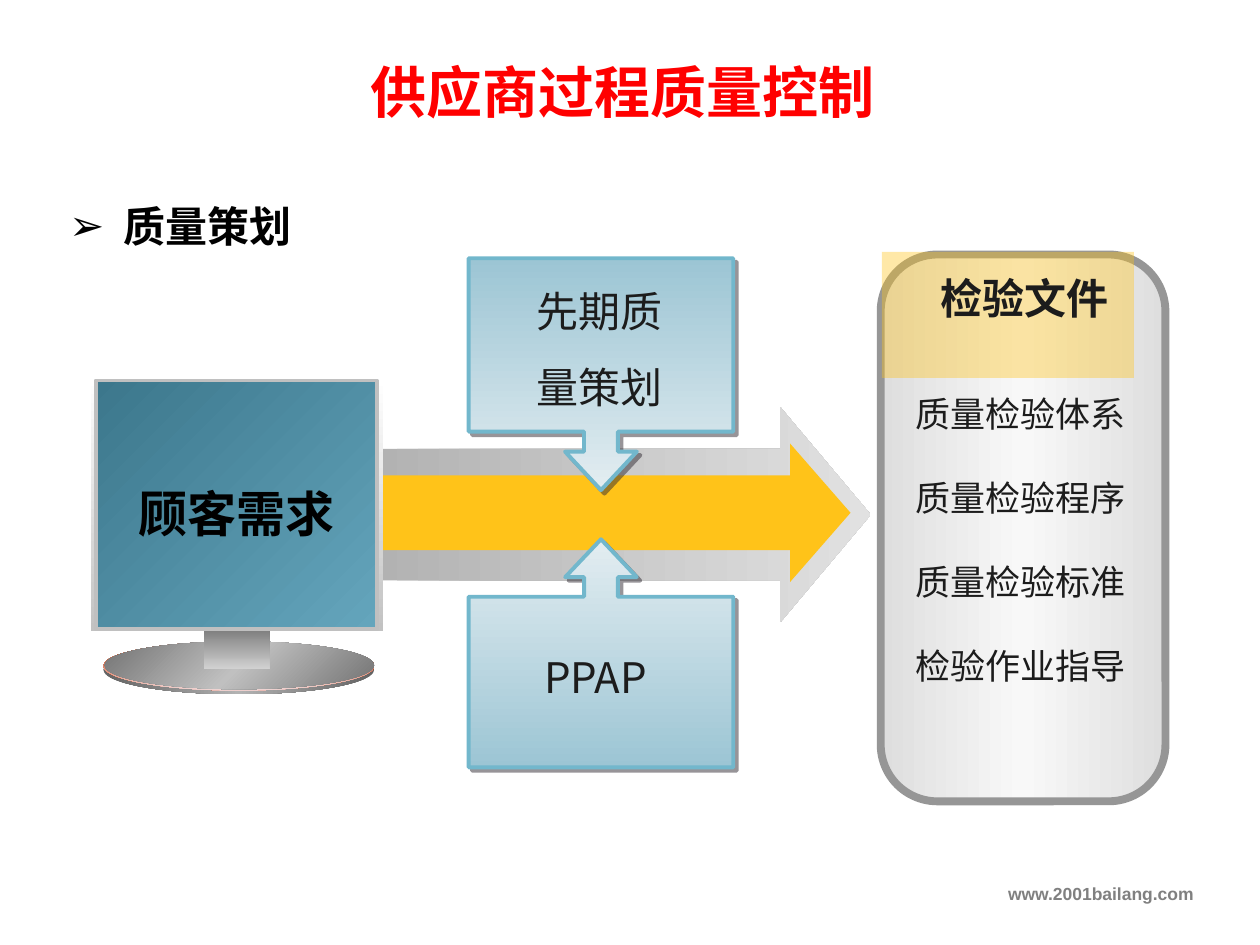
from dataclasses import dataclass

from lxml.etree import SubElement
from pptx import Presentation
from pptx.dml.color import RGBColor
from pptx.enum.shapes import MSO_SHAPE as Shape
from pptx.enum.text import MSO_ANCHOR as Anchor, PP_ALIGN as Align
from pptx.oxml.ns import qn
from pptx.util import Inches, Pt

CJK, LATIN = "Noto Sans CJK SC", "Arial"
BLACK, INK = RGBColor(0, 0, 0), RGBColor(0x1C, 0x1C, 0x1C)
RED, GRAY = RGBColor(0xFF, 0, 0), RGBColor(0x80, 0x80, 0x80)
AMBER = RGBColor(0xFF, 0xC3, 0x19)
SILVER, STEEL = RGBColor(0xC0, 0xC0, 0xC0), RGBColor(0x96, 0x96, 0x96)
SKY, SHADOW = RGBColor(0x72, 0xB7, 0xCC), RGBColor(0x30, 0x2A, 0x32)
CALLOUT_DARK, CALLOUT_LIGHT = RGBColor(0x9C, 0xC5, 0xD4), RGBColor(0xE3, 0xED, 0xF1)


@dataclass
class Gradient:
    colors: list[RGBColor]
    angle: int = 0


@dataclass
class Block:
    kind: Shape
    box: tuple[float, float, float, float]
    fill: RGBColor | Gradient
    adj: tuple[float, ...] = ()
    line: RGBColor | None = None
    width: float = 2.25
    shadow: bool = False


def grays(*levels: int) -> list[RGBColor]:
    return [RGBColor(v, v, v) for v in levels]


def add_color(parent, color: RGBColor, alpha: int | None = None) -> None:
    clr = SubElement(parent, qn("a:srgbClr"), val=str(color))
    if alpha is not None:
        SubElement(clr, qn("a:alpha"), val=str(alpha * 1000))


def set_gradient(shape, gradient: Gradient) -> None:
    """Replace the stops so that any number of colours is possible."""
    shape.fill.gradient()
    grad = shape._element.spPr.find(qn("a:gradFill"))
    for child in list(grad):
        grad.remove(child)
    stops = SubElement(grad, qn("a:gsLst"))
    last = len(gradient.colors) - 1
    for i, color in enumerate(gradient.colors):
        add_color(SubElement(stops, qn("a:gs"), pos=str(100000 * i // last)), color)
    SubElement(grad, qn("a:lin"), ang=str(gradient.angle * 60000), scaled="0")


def draw_block(s, block: Block) -> None:
    sp = s.shapes.add_shape(block.kind, *map(Inches, block.box))
    sp.shadow.inherit = False
    for i, value in enumerate(block.adj):
        sp.adjustments[i] = value
    if isinstance(block.fill, Gradient):
        set_gradient(sp, block.fill)
    else:
        sp.fill.solid()
        sp.fill.fore_color.rgb = block.fill
    if block.line is None:
        sp.line.fill.background()
    else:
        sp.line.color.rgb = block.line
        sp.line.width = Pt(block.width)
    if block.shadow:
        effects = sp._element.spPr.find(qn("a:effectLst"))
        outer = SubElement(effects, qn("a:outerShdw"), dist=str(Pt(2.8)),
                           dir=str(45 * 60000), algn="ctr", rotWithShape="0")
        add_color(outer, SHADOW, 50)


def add_text(s, box: tuple[float, float, float, float], *lines: str, size: int,
             color: RGBColor = INK, font: str = CJK, bold: bool = False,
             align: Align = Align.LEFT, anchor: Anchor = Anchor.TOP,
             spacing: float | None = None, wrap: bool = True, bullet: str = "") -> None:
    tf = s.shapes.add_textbox(*map(Inches, box)).text_frame
    tf.word_wrap, tf.vertical_anchor = wrap, anchor
    for i, line in enumerate(lines):
        p = tf.add_paragraph() if i else tf.paragraphs[0]
        p.alignment = align
        if spacing:
            p.line_spacing = spacing
        if bullet:
            pPr = p._p.get_or_add_pPr()
            pPr.set("marL", str(Inches(0.43)))
            pPr.set("indent", str(-Inches(0.43)))
            SubElement(pPr, qn("a:buFont"), typeface=font)
            SubElement(pPr, qn("a:buChar"), char=bullet)
        r = p.add_run()
        r.text = line
        r.font.size, r.font.bold, r.font.name = Pt(size), bold, font
        r.font.color.rgb = color
        SubElement(r._r.get_or_add_rPr(), qn("a:ea"), typeface=CJK)


def curve(points: list[tuple[float, float]], steps: int = 8) -> list[tuple[float, float]]:
    """Sample a chain of cubic Bezier segments that share their end points."""
    out = []
    for i in range(0, len(points) - 1, 3):
        a, b, c, d = points[i:i + 4]
        for t in (k / steps for k in range(1, steps + 1)):
            u = 1 - t
            out.append(tuple(u**3 * a[j] + 3 * u * u * t * b[j] + 3 * u * t * t * c[j]
                             + t**3 * d[j] for j in (0, 1)))
    return out


def draw_panel_cap(s) -> None:
    outline = [(7.02, 2.63), (7.02, 2.63), (7, 2.52), (7.03, 2.36),
               (7.08, 2.26), (7.13, 2.09), (7.31, 2.05),
               (7.49, 2), (7.42, 2.03), (7.65, 2.03),
               (7.87, 2.02), (8.44, 2.03), (8.65, 2.03),
               (8.86, 2.03), (8.76, 2.01), (8.89, 2.03),
               (9.02, 2.06), (9.15, 2.18), (9.22, 2.39),
               (9.24, 2.55), (9.24, 2.63), (9.24, 2.63)]
    builder = s.shapes.build_freeform(*outline[0], scale=Inches(1))
    builder.add_line_segments(curve(outline), close=True)
    sp = builder.convert_to_shape()
    sp.shadow.inherit = False
    sp.fill.solid()
    sp.fill.fore_color.rgb = AMBER
    clr = sp._element.spPr.find(qn("a:solidFill")).find(qn("a:srgbClr"))
    SubElement(clr, qn("a:alpha"), val="38000")
    sp.line.fill.background()


ARROWS = [
    Block(Shape.RIGHT_ARROW, (2.99, 3.23, 3.92, 1.71), Gradient(grays(0xB2, 0xE1)),
          (0.611, 0.42)),
    Block(Shape.RIGHT_ARROW, (2.76, 3.52, 3.99, 1.1), AMBER, (0.539, 0.436)),
]
MONITOR = [
    Block(Shape.OVAL, (0.82, 5.12, 2.15, 0.39), Gradient(grays(0x63, 0xB2, 0x63))),
    Block(Shape.OVAL, (0.82, 5.09, 2.15, 0.39),
          Gradient([RGBColor(0xCC, 0x33, 0), RGBColor(0xEF, 0xD6, 0xD5)], 90)),
    Block(Shape.OVAL, (0.83, 5.09, 2.14, 0.38), Gradient(grays(0x73, 0xC0, 0x73), 45)),
    Block(Shape.RECTANGLE, (1.62, 4.97, 0.52, 0.34), Gradient(grays(0x77, 0xD1), 90)),
    Block(Shape.RECTANGLE, (0.72, 3, 2.32, 2.01), Gradient(grays(0xFF, 0xC2), 90)),
    Block(Shape.RECTANGLE, (0.76, 3.02, 2.23, 1.97),
          Gradient([RGBColor(0x3C, 0x77, 0x8C), RGBColor(0x64, 0xA5, 0xBC)], 45),
          line=SILVER),
]
PANEL = Block(Shape.ROUNDED_RECTANGLE, (6.99, 2.02, 2.26, 4.34),
              Gradient(grays(0xDE, 0xF8, 0xDE)), (0.199,), STEEL, 4.5)
CALLOUTS = [
    Block(Shape.UP_ARROW_CALLOUT, (3.72, 4.28, 2.1, 1.81),
          Gradient([CALLOUT_LIGHT, CALLOUT_DARK], 90),
          (0.148, 0.157, 0.166, 0.748), SKY, shadow=True),
    Block(Shape.DOWN_ARROW_CALLOUT, (3.72, 2.05, 2.1, 1.84),
          Gradient([CALLOUT_DARK, CALLOUT_LIGHT], 90),
          (0.146, 0.155, 0.166, 0.748), SKY, shadow=True),
]


def main() -> None:
    prs = Presentation()
    prs.slide_width, prs.slide_height = Inches(10), Inches(7.5)
    s = prs.slides.add_slide(prs.slide_layouts[6])

    add_text(s, (0, 6.96, 9.57, 0.35), "www.2001bailang.com", size=10, color=GRAY,
             font=LATIN, bold=True, align=Align.RIGHT)
    add_text(s, (0.45, 1.58, 9, 0.42), "质量策划", size=24, color=BLACK, font=LATIN,
             bold=True, anchor=Anchor.MIDDLE, bullet="➢")
    for block in ARROWS + MONITOR:
        draw_block(s, block)
    add_text(s, (1, 3.95, 2.08, 0.38), "顾客需求", size=28, color=BLACK, bold=True,
             anchor=Anchor.MIDDLE, spacing=0.6)

    draw_block(s, PANEL)
    draw_panel_cap(s)
    add_text(s, (7.36, 2.11, 1.55, 0.5), "检验文件", size=24, bold=True,
             align=Align.CENTER, wrap=False)
    add_text(s, (6.98, 2.73, 2.24, 2.79), "质量检验体系", "质量检验程序", "质量检验标准",
             "检验作业指导", size=20, align=Align.CENTER, spacing=2)

    for callout in CALLOUTS:
        draw_block(s, callout)
    add_text(s, (4.06, 2.02, 1.4, 1.31), "先期质量策划", size=24, align=Align.CENTER,
             spacing=1.5)
    add_text(s, (4.22, 5.12, 1.13, 0.5), "PPAP", size=24)
    add_text(s, (0.36, 0.45, 9.17, 0.55), "供应商过程质量控制", size=32, color=RED,
             bold=True, align=Align.CENTER, anchor=Anchor.MIDDLE)
    prs.save("out.pptx")


if __name__ == "__main__":
    main()
